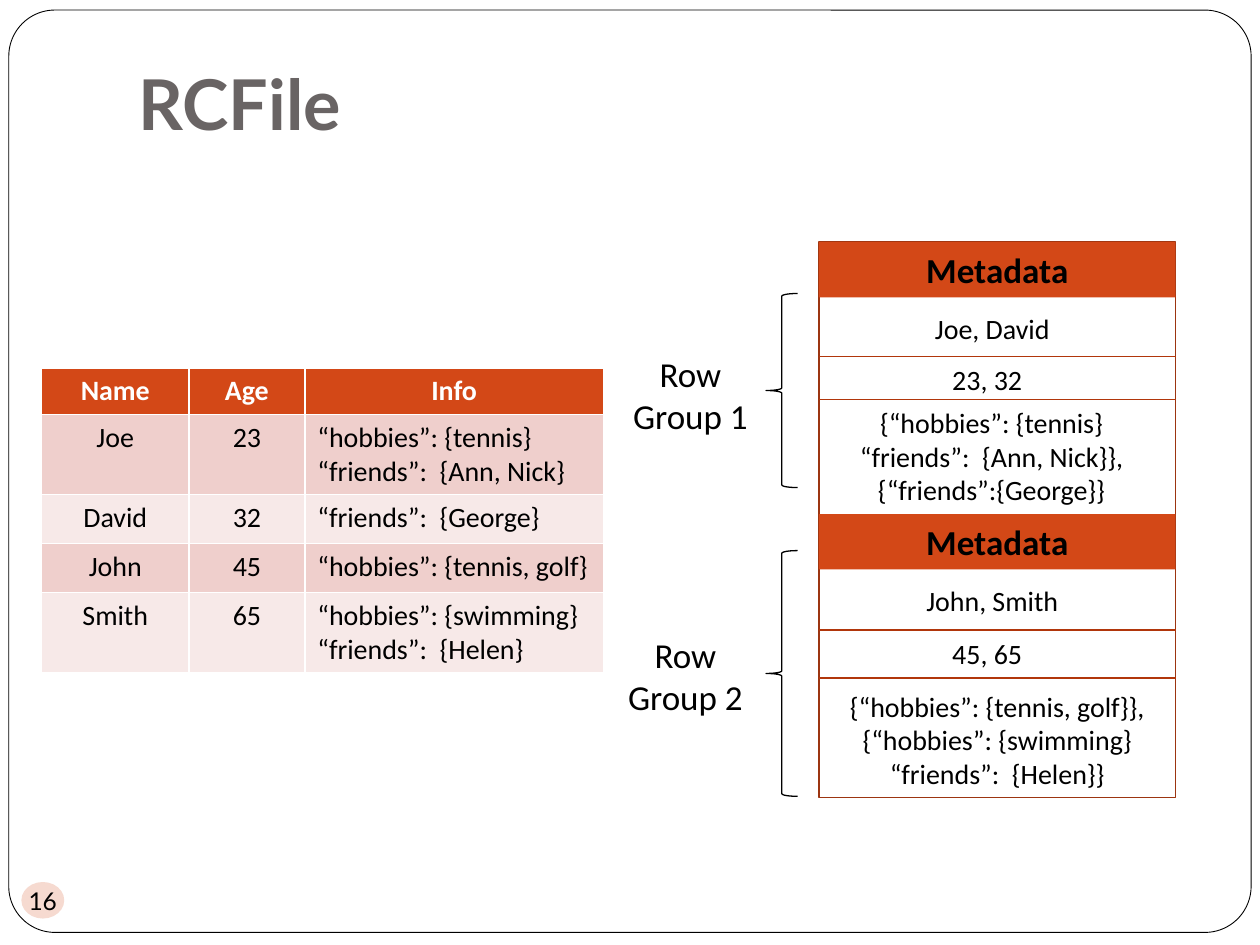
"""Build the RCFile slide: a table beside its row-group storage layout."""
from lxml import etree
from pptx import Presentation
from pptx.dml.color import RGBColor
from pptx.enum import shapes, text
from pptx.oxml import ns
from pptx.util import Inches, Pt

COLORS = {
    "black": "000000", "white": "FFFFFF", "title": "696464",
    "accent": "D34817", "outline": "9C3511", "rule": "B1360B",
    "odd": "EFCFCC", "even": "F7E9E8",
}
SHAPE = shapes.MSO_SHAPE
ALIGN = text.PP_ALIGN
ANCHOR = text.MSO_ANCHOR


def color(name):
    return RGBColor.from_string(COLORS[name])


class SlideBuilder:
    def __init__(self, page, font="Calibri"):
        self.page = page
        self.font = font

    def set_text(self, frame, content, size, ink="black", bold=False,
                 align=ALIGN.CENTER, font=None):
        frame.text = content
        for para in frame.paragraphs:
            para.alignment = align
            para.font.name = font or self.font
            para.font.size = Pt(size)
            para.font.bold = bold
            para.font.color.rgb = color(ink)

    def label(self, area, content, size, anchor=ANCHOR.TOP, **style):
        box = self.page.shapes.add_textbox(*map(Inches, area))
        box.text_frame.word_wrap = True
        box.text_frame.vertical_anchor = anchor
        self.set_text(box.text_frame, content, size, **style)
        return box

    def shape(self, kind, area, fill=None, line=None, width=1):
        shape = self.page.shapes.add_shape(kind, *map(Inches, area))
        shape.shadow.inherit = False
        if fill:
            shape.fill.solid()
            shape.fill.fore_color.rgb = color(fill)
        else:
            shape.fill.background()
        if line:
            shape.line.color.rgb = color(line)
            shape.line.width = Pt(width)
        else:
            shape.line.fill.background()
        return shape

    def rule(self, left, right, top):
        line = self.page.shapes.add_connector(
            shapes.MSO_CONNECTOR.STRAIGHT,
            Inches(left), Inches(top), Inches(right), Inches(top))
        line.line.color.rgb = color("rule")
        line.line.width = Pt(0.75)
        etree.SubElement(line._element.spPr, ns.qn("a:effectLst"))

    def table(self, left, top, widths, heights, rows):
        frame = self.page.shapes.add_table(
            len(rows), len(widths), Inches(left), Inches(top),
            Inches(sum(widths)), Inches(sum(heights)))
        grid = frame.table
        for column, width in zip(grid.columns, widths):
            column.width = Inches(width)
        for r, (row, height) in enumerate(zip(rows, heights)):
            grid.rows[r].height = Inches(height)
            header = r == 0
            fill = "accent" if header else ("odd" if r % 2 else "even")
            for c, content in enumerate(row):
                cell = grid.cell(r, c)
                cell.fill.solid()
                cell.fill.fore_color.rgb = color(fill)
                centered = header or c < 2
                self.set_text(cell.text_frame, content, 16,
                              ink="white" if header else "black", bold=header,
                              align=ALIGN.CENTER if centered else ALIGN.LEFT)

    def row_group(self, top, rules, names, ages, details, details_area):
        header = self.shape(SHAPE.RECTANGLE, (6.5, top, 2.83, 0.44), "accent")
        self.set_text(header.text_frame, "Metadata", 20, bold=True)
        for y in rules:
            self.rule(6.5, 9.33, y)
        self.label((6.75, top + 0.5, 2.25, 0.37), names, 16)
        self.label((6.42, rules[0], 2.83, 0.37), ages, 16)
        self.label(details_area, details, 16)

    def brace(self, top, height, label_left, label_top, content):
        self.shape(SHAPE.LEFT_BRACE, (6.08, top, 0.25, height),
                   line="black", width=0.75)
        self.label((label_left, label_top, 1.54, 0.77), content, 20)

    def page_number(self, content):
        badge = self.shape(SHAPE.OVAL, (0.17, 7, 0.34, 0.29), "accent")
        tint = badge._element.spPr.find(".//" + ns.qn("a:srgbClr"))
        etree.SubElement(tint, ns.qn("a:alpha"), val="20000")
        frame = badge.text_frame
        frame.margin_left = frame.margin_right = 0
        frame.margin_top = frame.margin_bottom = 0
        frame.word_wrap = False
        self.set_text(frame, content, 14, font="Lato")


def main():
    deck = Presentation()
    deck.slide_width, deck.slide_height = Inches(10), Inches(7.5)
    builder = SlideBuilder(deck.slides.add_slide(deck.slide_layouts[6]))

    border = builder.shape(SHAPE.ROUNDED_RECTANGLE, (0.07, 0.08, 9.86, 7.32),
                           "white", "black", 0.5)
    border.adjustments[0] = 0.05
    title = builder.label((1, 0.3, 8.5, 0.95), "RCFile", 40, ANCHOR.BOTTOM,
                          ink="title", bold=True, align=ALIGN.LEFT, font="Lato")
    title.text_frame.margin_bottom = Inches(0.1)

    builder.shape(SHAPE.RECTANGLE, (6.5, 1.92, 2.83, 4.41), line="outline")
    builder.row_group(
        1.92, (2.83, 3.17), "Joe, David", "23, 32",
        "{“hobbies”: {tennis}\n“friends”:  {Ann, Nick}},\n{“friends”:{George}}",
        (6.33, 3.17, 3.08, 0.91))
    builder.row_group(
        4.08, (5, 5.38), "John, Smith", "45, 65",
        "{“hobbies”: {tennis, golf}},\n{“hobbies”: {swimming}\n“friends”:  {Helen}}",
        (6.5, 5.42, 2.83, 0.91))
    builder.brace(2.33, 1.54, 4.71, 2.75, "Row\nGroup 1")
    builder.brace(4.37, 1.95, 4.67, 4.98, "Row\nGroup 2")

    builder.table(0.33, 2.92, (1.17, 0.92, 2.37), (0.37, 0.63, 0.39, 0.39, 0.63), [
        ("Name", "Age", "Info"),
        ("Joe", "23", "“hobbies”: {tennis}\n“friends”:  {Ann, Nick}"),
        ("David", "32", "“friends”:  {George}"),
        ("John", "45", "“hobbies”: {tennis, golf}"),
        ("Smith", "65", "“hobbies”: {swimming}\n“friends”:  {Helen}"),
    ])
    builder.page_number("16")
    deck.save("out.pptx")


if __name__ == "__main__":
    main()
